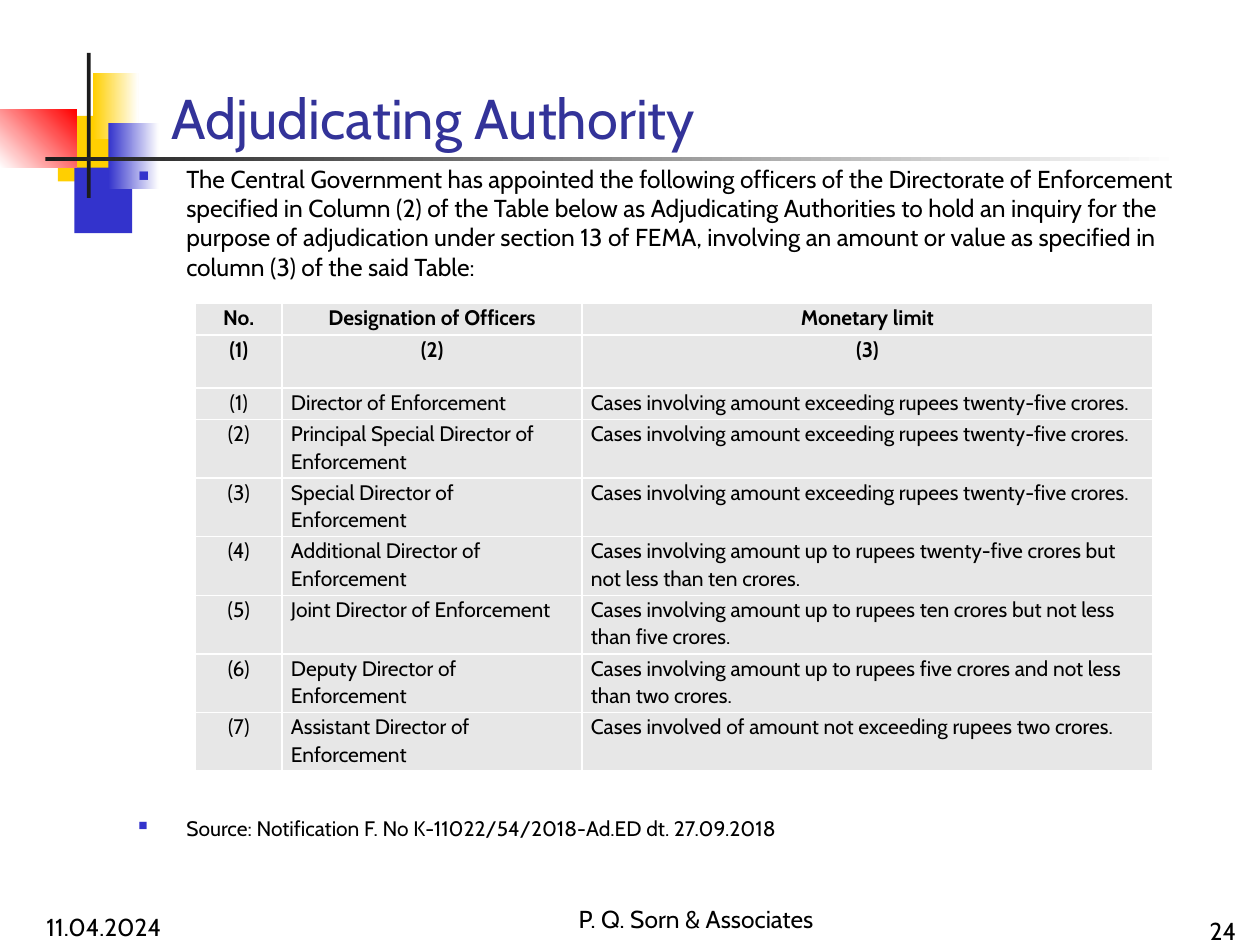
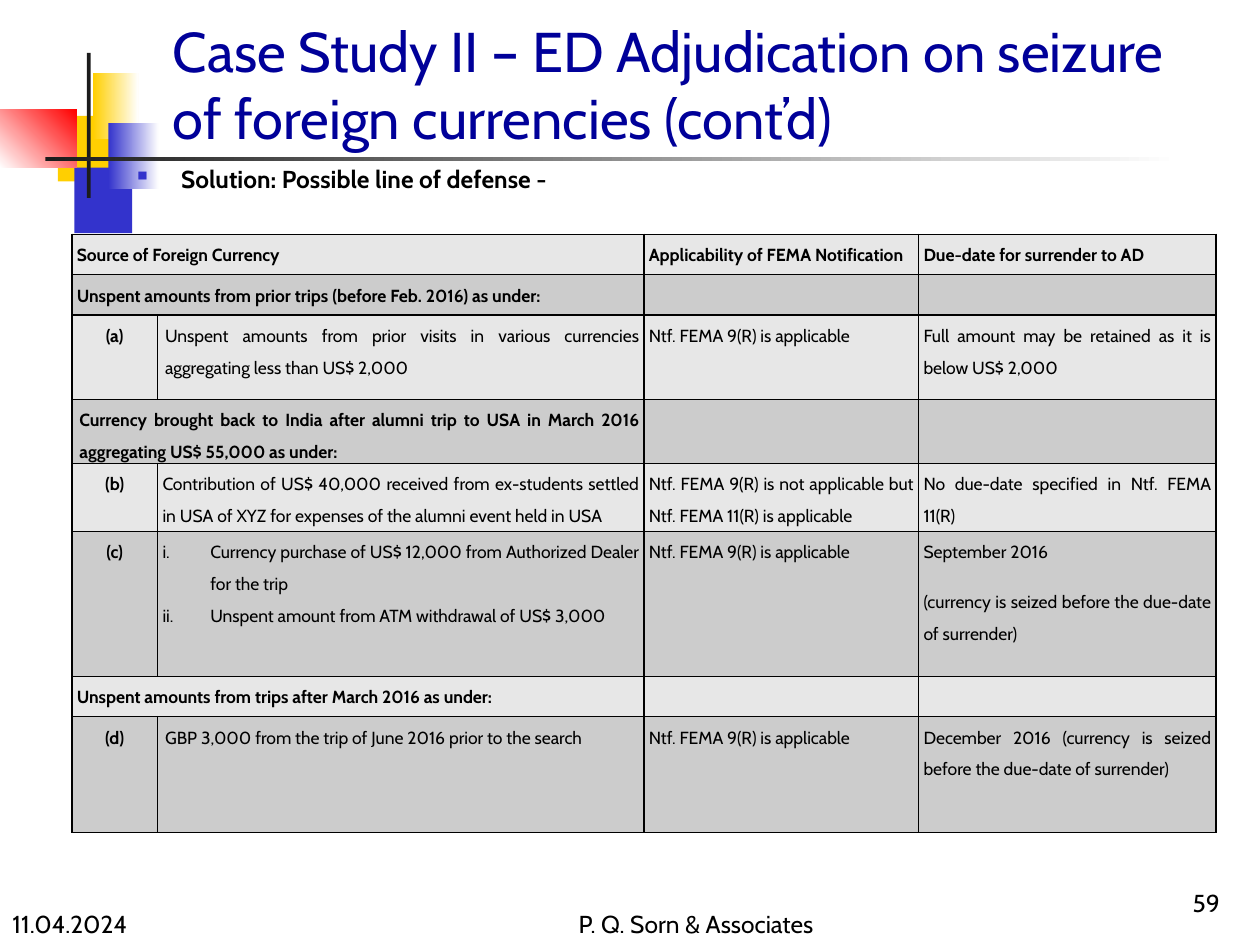
from dataclasses import dataclass
from typing import Callable, NamedTuple

from lxml.etree import SubElement
from pptx import Presentation
from pptx.dml.color import RGBColor
from pptx.enum.shapes import MSO_SHAPE
from pptx.enum.text import MSO_ANCHOR as Anchor, MSO_AUTO_SIZE as AutoSize, PP_ALIGN as Align
from pptx.oxml.ns import qn
from pptx.util import Inches, Pt


@dataclass(frozen=True)
class Theme:
    font: str = "Cabin"
    ink: str = "000000"
    paper: str = "FFFFFF"
    yellow: str = "FFCF01"
    blue: str = "3333CC"
    red: str = "FF0000"
    charcoal: str = "1C1C1C"
    indigo: str = "333399"
    navy: str = "000099"
    light_grey: str = "E7E7E7"
    mid_grey: str = "CCCCCC"
    title_size: int = 32
    body_size: int = 14
    source_size: int = 12
    officers_size: int = 12
    currency_size: int = 10


THEME = Theme()
HANGING = 0.38


class Area(NamedTuple):
    left: float
    top: float
    width: float
    height: float


class Block(NamedTuple):
    area: Area
    start: str
    end: str | None = None
    angle: float = 0


class Label(NamedTuple):
    area: Area
    text: str
    align: Align = Align.LEFT


class Bullet(NamedTuple):
    area: Area
    text: str
    size: int
    mark: str
    mark_percent: int = 100
    bold: bool = False


class Look(NamedTuple):
    align: Align
    bold: bool
    fill: str
    indent: float = 0
    numbered: bool = False


@dataclass(frozen=True)
class Grid:
    area: Area
    widths: list[float]
    heights: list[float]
    rows: list[list[str]]
    look: Callable[[int, int], Look]
    size: int
    border: str
    inset: float
    line_spacing: float
    space_after: int = 0
    full_rows: tuple[int, ...] = ()


@dataclass(frozen=True)
class Content:
    title: str
    title_area: Area
    title_color: str
    bullets: list[Bullet]
    grid: Grid
    footers: list[Label]


ORNAMENT = [
    Block(Area(0.46, 0.92, 0.48, 0.52), THEME.yellow),
    Block(Area(0.59, 1.33, 0.46, 0.52), THEME.blue),
    Block(Area(0.74, 0.58, 0.36, 0.52), THEME.yellow, THEME.paper),
    Block(Area(0.86, 0.98, 0.4, 0.52), THEME.blue, THEME.paper),
    Block(Area(0, 0.87, 0.61, 0.46), THEME.paper, THEME.red, 45),
    Block(Area(0.69, 0.42, 0.03, 1.15), THEME.charcoal),
    Block(Area(0.36, 1.25, 9, 0.03), THEME.charcoal, THEME.paper),
]


def rgb(value: str) -> RGBColor:
    return RGBColor.from_string(value)


def place(area: Area) -> list[int]:
    return [Inches(length) for length in area]


def format_para(para, size: int, color: str = THEME.ink, bold: bool = False,
                align: Align = Align.LEFT) -> None:
    para.alignment = align
    for span in para.runs:
        span.font.name = THEME.font
        span.font.size = Pt(size)
        span.font.bold = bold
        span.font.color.rgb = rgb(color)


def hang(para, left: float, first: float):
    properties = para._p.get_or_add_pPr()
    properties.set("marL", str(Inches(left)))
    properties.set("indent", str(Inches(first)))
    return properties


def draw_block(page, block: Block) -> None:
    shape = page.shapes.add_shape(MSO_SHAPE.RECTANGLE, *place(block.area))
    shape.shadow.inherit = False
    shape.line.fill.background()
    if block.end is None:
        shape.fill.solid()
        shape.fill.fore_color.rgb = rgb(block.start)
        return
    shape.fill.gradient()
    shape.fill.gradient_angle = block.angle
    for stop, color in zip(shape.fill.gradient_stops, (block.start, block.end)):
        stop.color.rgb = rgb(color)


def draw_title(page, content: Content) -> None:
    title = page.shapes.title
    title.left, title.top, title.width, title.height = place(content.title_area)
    frame = title.text_frame
    frame.text = content.title
    frame.auto_size = AutoSize.NONE
    frame.vertical_anchor = Anchor.BOTTOM
    format_para(frame.paragraphs[0], THEME.title_size, content.title_color)


def add_text(page, area: Area, text: str, anchor: Anchor):
    frame = page.shapes.add_textbox(*place(area)).text_frame
    frame.word_wrap = True
    frame.vertical_anchor = anchor
    frame.text = text
    return frame.paragraphs[0]


def draw_bullet(page, bullet: Bullet) -> None:
    para = add_text(page, bullet.area, bullet.text, Anchor.TOP)
    format_para(para, bullet.size, bold=bullet.bold)
    properties = hang(para, HANGING, -HANGING)
    color = SubElement(properties, qn("a:buClr"))
    SubElement(color, qn("a:srgbClr"), val=THEME.blue)
    SubElement(properties, qn("a:buSzPct"), val=str(bullet.mark_percent * 1000))
    SubElement(properties, qn("a:buChar"), char=bullet.mark)


def draw_label(page, label: Label) -> None:
    para = add_text(page, label.area, label.text, Anchor.BOTTOM)
    format_para(para, THEME.body_size, align=label.align)


def draw_borders(cell, color: str) -> None:
    properties = cell._tc.get_or_add_tcPr()
    for side in ("lnL", "lnR", "lnT", "lnB"):
        line = SubElement(properties, qn(f"a:{side}"), w=str(Pt(1)))
        fill = SubElement(line, qn("a:solidFill"))
        SubElement(fill, qn("a:srgbClr"), val=color)


def fill_cell(cell, text: str, look: Look, grid: Grid) -> None:
    draw_borders(cell, grid.border)
    cell.fill.solid()
    cell.fill.fore_color.rgb = rgb(look.fill)
    cell.margin_left = cell.margin_right = Inches(grid.inset)
    cell.margin_top = cell.margin_bottom = 0
    if not text:
        return
    cell.text_frame.text = text
    paras = cell.text_frame.paragraphs
    for para in paras:
        format_para(para, grid.size, bold=look.bold, align=look.align)
        para.line_spacing = grid.line_spacing
        para.space_after = Pt(grid.space_after)
        if look.numbered:
            para.space_after = Pt(grid.space_after if para is paras[-1] else 0)
            properties = hang(para, HANGING, -HANGING)
            SubElement(properties, qn("a:buAutoNum"), type="romanLcPeriod")
        elif look.indent:
            hang(para, look.indent, 0)


def draw_grid(page, grid: Grid) -> None:
    frame = page.shapes.add_table(len(grid.heights), len(grid.widths), *place(grid.area))
    table = frame.table
    table.first_row = table.horz_banding = False
    for column, width in zip(table.columns, grid.widths):
        column.width = Inches(width)
    for row, height in zip(table.rows, grid.heights):
        row.height = Inches(height)
    for r in grid.full_rows:
        table.cell(r, 0).merge(table.cell(r, 1))
    for r, texts in enumerate(grid.rows):
        for c, text in enumerate(texts):
            fill_cell(table.cell(r, c), text, grid.look(r, c), grid)


def draw_page(deck, content: Content) -> None:
    page = deck.slides.add_slide(deck.slide_layouts[5])
    for block in ORNAMENT:
        draw_block(page, block)
    draw_title(page, content)
    for bullet in content.bullets:
        draw_bullet(page, bullet)
    for label in content.footers:
        draw_label(page, label)
    draw_grid(page, content.grid)


def footers(number: str, date_at: tuple, firm_at: tuple, number_at: tuple) -> list[Label]:
    return [
        Label(Area(*date_at, 2.08, 0.5), "11.04.2024"),
        Label(Area(*firm_at, 3.17, 0.5), "P. Q. Sorn & Associates", Align.CENTER),
        Label(Area(*number_at, 2.08, 0.5), number, Align.RIGHT),
    ]


def officer_look(row: int, column: int) -> Look:
    centred = row < 2 or column == 0
    return Look(Align.CENTER if centred else Align.LEFT, row < 2, THEME.light_grey)


CURRENCY_HEADINGS = (0, 1, 3, 6)


def currency_look(row: int, column: int) -> Look:
    heading = row in CURRENCY_HEADINGS
    align = Align.LEFT if row == 0 else Align.JUSTIFY
    if column == 0 and not heading:
        align = Align.CENTER
    return Look(align, heading or column == 0,
                THEME.mid_grey if row % 2 else THEME.light_grey,
                0.02 if (row, column) in ((2, 1), (3, 0), (7, 1)) else 0,
                (row, column) == (5, 1))


ABOVE_25 = "Cases involving amount exceeding rupees twenty-five crores."
UP_TO = "Cases involving amount up to rupees"
OFFICERS = [
    ("Director of Enforcement", ABOVE_25),
    ("Principal Special Director of Enforcement", ABOVE_25),
    ("Special Director of Enforcement", ABOVE_25),
    ("Additional Director of Enforcement", f"{UP_TO} twenty-five crores but not less than ten crores."),
    ("Joint Director of Enforcement", f"{UP_TO} ten crores but not less than five crores."),
    ("Deputy Director of Enforcement", f"{UP_TO} five crores and not less than two crores."),
    ("Assistant Director of Enforcement", "Cases involved of amount not exceeding rupees two crores."),
]
APPLICABLE = "Ntf. FEMA 9(R) is applicable"

AUTHORITY = Content(
    "Adjudicating Authority", Area(1.26, 0.23, 8.52, 1.02), THEME.indigo,
    [Bullet(Area(1, 1.25, 8.78, 1.1), "The Central Government has appointed the following officers of the Directorate of Enforcement specified in Column (2) of the Table below as Adjudicating Authorities to hold an inquiry for the purpose of adjudication under section 13 of FEMA, involving an amount or value as specified in column (3) of the said Table:", THEME.body_size, "■", 60),
     Bullet(Area(1, 6.42, 8.78, 0.3), "Source: Notification F. No K-11022/54/2018-Ad.ED dt. 27.09.2018", THEME.source_size, "■", 60)],
    Grid(Area(1.55, 2.41, 7.6, 3.72), [0.69, 2.38, 4.53], [0.25, 0.42, 0.25] + [0.465] * 6,
         [["No.", "Designation of Officers", "Monetary limit"], ["(1)", "(2)", "(3)"]]
         + [[f"({n})", *officer] for n, officer in enumerate(OFFICERS, 1)],
         officer_look, THEME.officers_size, THEME.paper, 0.07, 1.07),
    footers("24", (0.27, 7.02), (3.94, 6.96), (7.83, 7.05)))

CASE_STUDY = Content(
    "Case Study II – ED Adjudication on seizure of foreign currencies (cont’d)",
    Area(1.27, 0, 8.5, 1.25), THEME.navy,
    [Bullet(Area(0.96, 1.25, 8.34, 0.4), "Solution: Possible line of defense -", THEME.body_size, "▪", bold=True)],
    Grid(Area(0.57, 1.86, 9.08, 4.75), [0.68, 3.86, 2.18, 2.36],
         [0.32, 0.32, 0.67, 0.51, 0.54, 1.15, 0.32, 0.92],
         [["Source of Foreign Currency", "", "Applicability of FEMA Notification", "Due-date for surrender to AD"],
          ["Unspent amounts from prior trips (before Feb. 2016) as under:", "", "", ""],
          ["(a)", "Unspent amounts from prior visits in various currencies aggregating less than US$ 2,000", APPLICABLE, "Full amount may be retained as it is below US$ 2,000"],
          ["Currency brought back to India after alumni trip to USA in March 2016 aggregating US$ 55,000 as under:", "", "", ""],
          ["(b)", "Contribution of US$ 40,000 received from ex-students settled in USA of XYZ for expenses of the alumni event held in USA", "Ntf. FEMA 9(R) is not applicable but Ntf. FEMA 11(R) is applicable", "No due-date specified in Ntf. FEMA 11(R)"],
          ["(c)", "Currency purchase of US$ 12,000 from Authorized Dealer for the trip\nUnspent amount from ATM withdrawal of US$ 3,000", APPLICABLE, "September 2016\n(currency is seized before the due-date of surrender)"],
          ["Unspent amounts from trips after March 2016 as under:", "", "", ""],
          ["(d)", "GBP 3,000 from the trip of June 2016 prior to the search", APPLICABLE, "December 2016 (currency is seized before the due-date of surrender)"]],
         currency_look, THEME.currency_size, THEME.ink, 0.04, 1.5, 10, CURRENCY_HEADINGS),
    footers("59", (0, 7), (3.94, 7), (7.7, 6.83)))


def main() -> None:
    deck = Presentation()
    deck.slide_width, deck.slide_height = Inches(10), Inches(7.5)
    for content in (AUTHORITY, CASE_STUDY):
        draw_page(deck, content)
    deck.save("out.pptx")


if __name__ == "__main__":
    main()
